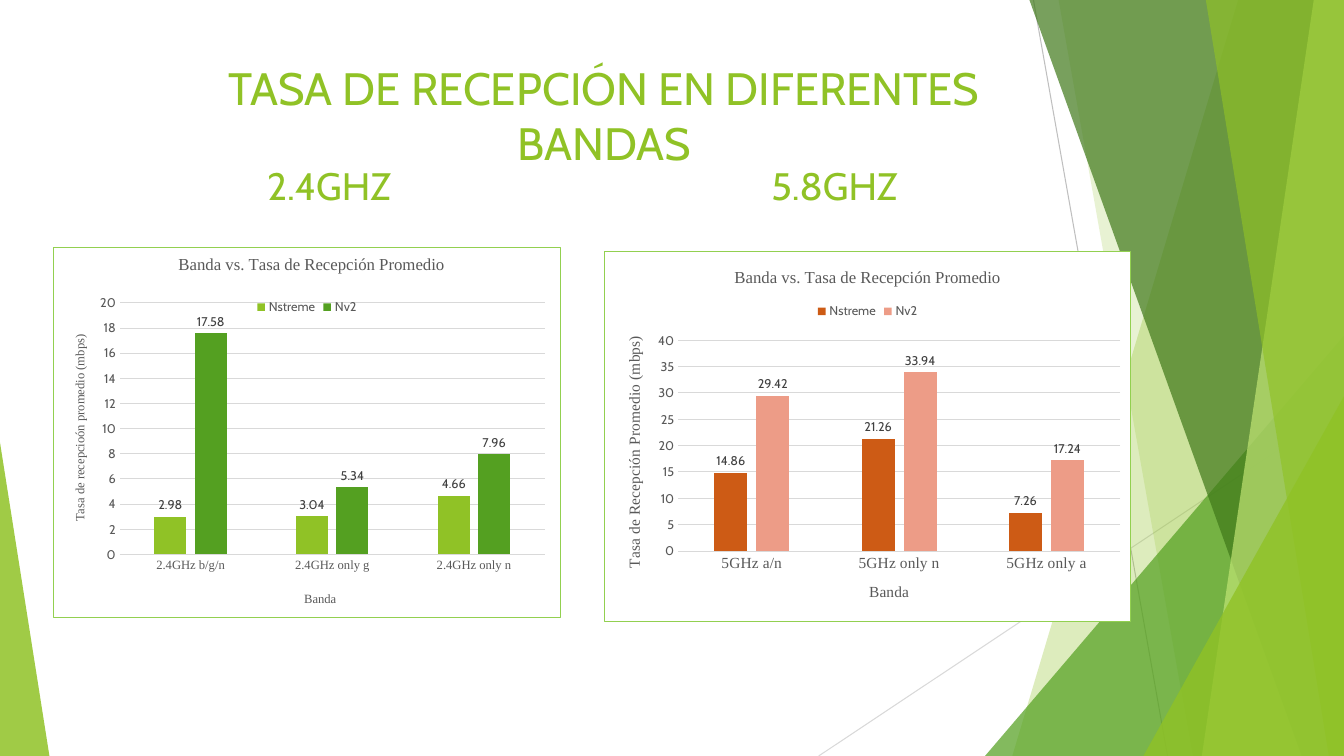
from lxml import etree
from pptx import Presentation
from pptx.chart.data import CategoryChartData
from pptx.dml.color import RGBColor
from pptx.enum.chart import XL_CHART_TYPE, XL_LABEL_POSITION, XL_LEGEND_POSITION, XL_TICK_MARK
from pptx.enum.shapes import MSO_CONNECTOR, MSO_SHAPE
from pptx.enum.text import MSO_ANCHOR, MSO_AUTO_SIZE, PP_ALIGN
from pptx.oxml import parse_xml
from pptx.oxml.ns import nsdecls, qn
from pptx.util import Pt

COLUMN = XL_CHART_TYPE.COLUMN_CLUSTERED
OUTER = XL_LABEL_POSITION.OUTSIDE_END
TOP_KEY = XL_LEGEND_POSITION.TOP
NO_TICK = XL_TICK_MARK.NONE
STRAIGHT = MSO_CONNECTOR.STRAIGHT
TRIANGLE = MSO_SHAPE.ISOSCELES_TRIANGLE
TOP = MSO_ANCHOR.TOP
FIXED = MSO_AUTO_SIZE.NONE
LEFT, CENTER = PP_ALIGN.LEFT, PP_ALIGN.CENTER

UNIT = 9144
WIDE, HIGH = 1333, 750
SANS, SERIF = "Cabin", "Times New Roman"
LIME, GREEN, GRAY, PALE = "90C226", "54A021", "595959", "D9D9D9"


def px(*nums):
    """Turn px lengths into EMU."""
    return [round(n * UNIT) for n in nums]


def color(code):
    """Turn a hex string into a colour."""
    return RGBColor.from_string(code)


def style(font, size, code, face):
    """Set size, colour and face of a font."""
    font.size, font.name = Pt(size), face
    font.color.rgb = color(code)


def glaze(shape, code, alpha):
    """Fill a shape with a see-through colour and no outline."""
    shape.shadow.inherit = False
    shape.fill.solid()
    shape.fill.fore_color.rgb = color(code)
    shape.line.fill.background()
    tint = shape.element.spPr.find(qn("a:solidFill"))[0]
    etree.SubElement(tint, qn("a:alpha")).set("val", str(alpha * 1000))


def add_line(shapes, ends, code):
    """Draw a thin straight line."""
    line = shapes.add_connector(STRAIGHT, *px(*ends))
    line.line.color.rgb = color(code)
    line.line.width = Pt(0.75)
    etree.SubElement(line.element.spPr, qn("a:effectLst"))


def add_shard(shapes, top, foot, code, alpha, right=WIDE):
    """Draw a slanted band from its left edge to the right side."""
    pen = shapes.build_freeform(top, 0, scale=UNIT)
    pen.add_line_segments([(right, 0), (right, HIGH), (foot, HIGH)], close=True)
    glaze(pen.convert_to_shape(), code, alpha)


def add_wedge(shapes, box, peak, code, alpha):
    """Draw a right triangle with its peak at one side."""
    wedge = shapes.add_shape(TRIANGLE, *px(*box))
    wedge.adjustments[0] = peak
    glaze(wedge, code, alpha)


def add_facets(shapes):
    """Draw the green facets at both sides of the slide."""
    add_line(shapes, (1025, 0, 1158, HIGH), "BFBFBF")
    add_line(shapes, (WIDE, 403, 812, HIGH), PALE)
    add_shard(shapes, 1228, 1004, LIME, 30)
    add_shard(shapes, 1050, 1183, LIME, 20)
    add_wedge(shapes, (977, 333, 356, 417), 1, GREEN, 72)
    add_shard(shapes, 1021, 1291, "3F7819", 70)
    add_shard(shapes, 1303, 1192, "C0E474", 70)
    add_shard(shapes, 1196, 1318, LIME, 65)
    add_wedge(shapes, (1134, 393, 199, 357), 1, LIME, 80)
    add_wedge(shapes, (0, 439, 49, 311), 0, LIME, 85)


def set_text(shape, box, text, size, align):
    """Place a text shape and fill it with one run."""
    shape.left, shape.top, shape.width, shape.height = px(*box)
    frame = shape.text_frame
    frame.word_wrap, frame.auto_size = True, FIXED
    frame.vertical_anchor = TOP
    para = frame.paragraphs[0]
    para.alignment, para.line_spacing = align, 1.0
    para.space_before = Pt(0)
    run = para.add_run()
    run.text = text
    style(run.font, size, LIME, SANS)
    return frame


def add_bands(shapes, box):
    """Write both band names, the second one at a tab stop."""
    shape = shapes.add_textbox(*px(*box))
    frame = set_text(shape, box, "2.4GHZ\t5.8GHZ", 27.3, LEFT)
    frame.margin_left = px(158)[0]
    props = frame.paragraphs[0].runs[0].font._element.getparent().getparent().find(qn("a:pPr"))
    stops = etree.SubElement(props, qn("a:tabLst"))
    stop = etree.SubElement(stops, qn("a:tab"))
    stop.set("pos", str(px(500)[0]))
    stop.set("algn", "l")


def pin(node, index, spot):
    """Give a chart part a fixed place, as shares of the chart."""
    for old in node.findall(qn("c:layout")):
        node.remove(old)
    layout = etree.Element(qn("c:layout"))
    hand = etree.SubElement(layout, qn("c:manualLayout"))
    marks = [("xMode", "edge"), ("yMode", "edge"), *zip("xywh", spot)]
    if len(spot) == 4:
        marks.insert(0, ("layoutTarget", "inner"))
    for tag, val in marks:
        etree.SubElement(hand, qn("c:" + tag)).set("val", str(val))
    node.insert(index, layout)


def set_title(title, text, size, spot, turn=0):
    """Write a chart or axis title."""
    run = title.text_frame.paragraphs[0].add_run()
    run.text = text
    style(run.font, size, GRAY, SERIF)
    run.font.bold = False
    body = title.element.xpath(".//a:bodyPr")[0]
    body.set("rot", str(turn))
    body.set("vert", "horz")
    if spot:
        pin(title.element, 1, spot)


def set_axis(axis, size, face):
    """Format the labels and ticks of an axis."""
    style(axis.tick_labels.font, size, GRAY, face)
    axis.major_tick_mark = axis.minor_tick_mark = NO_TICK


def add_rates(shapes, box, cats, rows, name, size, top, step, plot, fill, spots):
    """Draw one column chart of rates per band."""
    data = CategoryChartData()
    data.categories = cats
    for key, vals, _ in rows:
        data.add_series(key, vals)
    chart = shapes.add_chart(COLUMN, *px(*box), data).chart
    style(chart.font, 10, "000000", SANS)
    chart.has_title = chart.has_legend = True
    set_title(chart.chart_title, "Banda vs. Tasa de Recepción Promedio", 12, spots[0])
    chart.legend.position, chart.legend.include_in_layout = TOP_KEY, False
    style(chart.legend.font, 9, GRAY, SANS)

    base, rise = chart.category_axis, chart.value_axis
    set_axis(base, size, SERIF)
    set_axis(rise, 9, SANS)
    set_title(base.axis_title, "Banda", size, spots[1])
    set_title(rise.axis_title, name, size, spots[2], -5400000)
    rise.minimum_scale, rise.maximum_scale, rise.major_unit = 0, top, step
    rise.format.line.fill.background()
    for line in (base.format.line, rise.major_gridlines.format.line):
        line.color.rgb, line.width = color(PALE), Pt(0.75)

    bars = chart.plots[0]
    bars.gap_width, bars.overlap, bars.vary_by_categories = 219, -27, False
    for series, (_, _, code) in zip(bars.series, rows):
        series.format.fill.solid()
        series.format.fill.fore_color.rgb = color(code)
        tags = series.data_labels
        tags.show_value, tags.position = True, OUTER
        style(tags.font, 9, "404040", SANS)

    pin(chart.element.xpath("c:chart/c:plotArea")[0], 0, plot)
    paint = f'<a:solidFill><a:srgbClr val="{fill}"/></a:solidFill>' if fill else "<a:noFill/>"
    frame = parse_xml(
        f'<c:spPr {nsdecls("c", "a")}>{paint}<a:ln w="9525"><a:solidFill>'
        '<a:srgbClr val="92D050"/></a:solidFill></a:ln></c:spPr>')
    chart.element.find(qn("c:chart")).addnext(frame)


def main():
    """Build the slide and save it."""
    deck = Presentation()
    deck.slide_width, deck.slide_height = px(WIDE, HIGH)
    slide = deck.slides.add_slide(deck.slide_layouts[5])
    shapes, title = slide.shapes, slide.shapes.title
    add_facets(shapes)
    set_text(title, (129, 55, 940, 103), "TASA DE RECEPCIÓN EN DIFERENTES BANDAS", 32.4, CENTER)
    title.element.getparent().append(title.element)
    add_bands(shapes, (107, 156, 940, 103))
    add_rates(
        shapes, (53, 245, 503, 368), ["2.4GHz b/g/n", "2.4GHz only g", "2.4GHz only n"],
        [("Nstreme", (2.98, 3.04, 4.66), LIME), ("Nv2", (17.58, 5.34, 7.96), GREEN)],
        "Tasa de recepcioón promedio (mbps)", 9, 20, 2, (0.13, 0.15, 0.84, 0.68), None,
        [(0.24, 0.01), (0.49, 0.92), (0.03, 0.23)])
    add_rates(
        shapes, (599, 249, 523, 368), ["5GHz a/n", "5GHz only n", "5GHz only a"],
        [("Nstreme", (14.86, 21.26, 7.26), "CD5B15"), ("Nv2", (29.42, 33.94, 17.24), "ED9C87")],
        "Tasa de Recepción Promedio (mbps)", 11, 40, 5, (0.14, 0.24, 0.84, 0.57), "FFFFFF",
        [None, None, None])
    deck.save("out.pptx")


if __name__ == "__main__":
    main()
